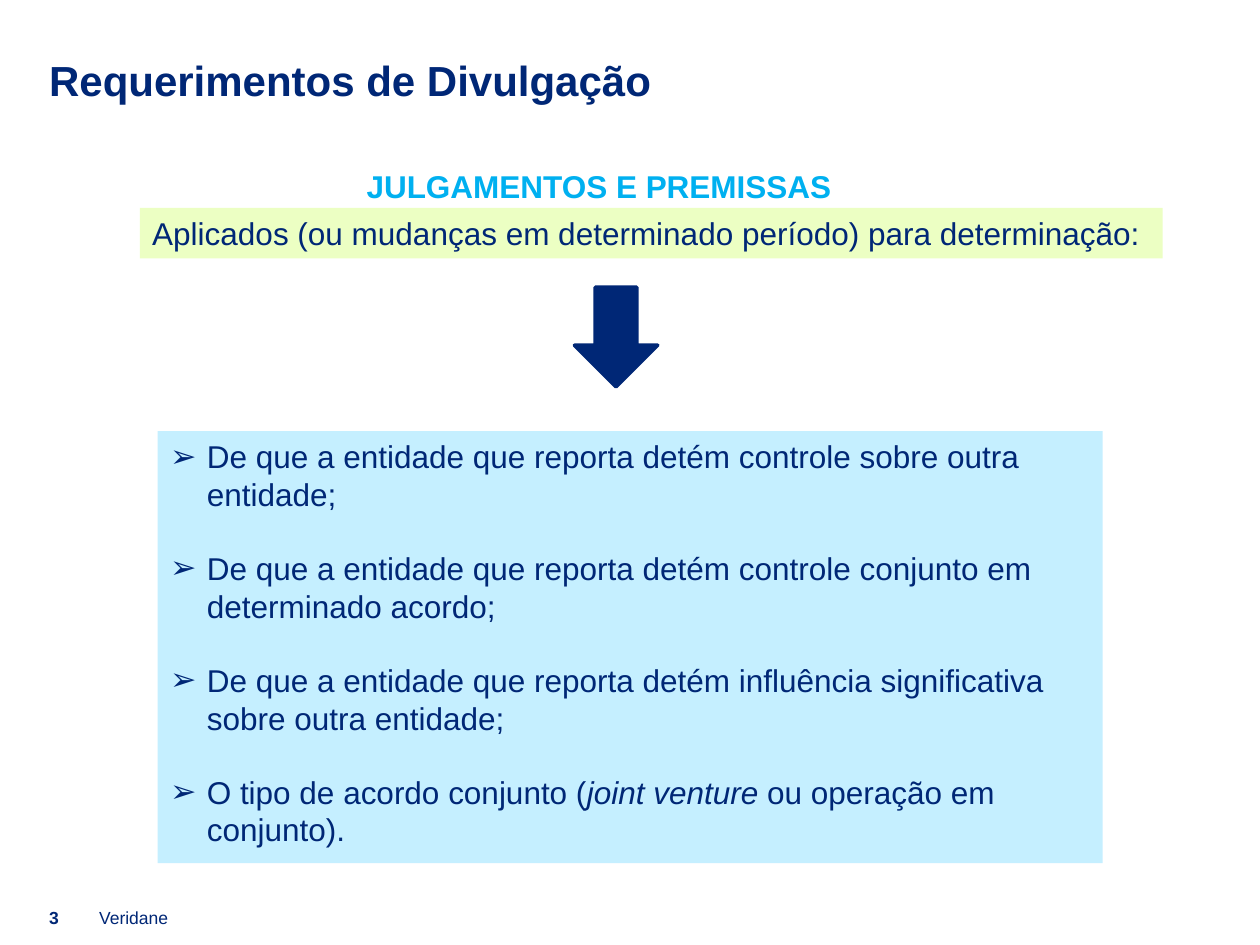
import pptx
import pptx.util
import pptx.dml.color
import pptx.enum.shapes
import pptx.enum.text
import pptx.oxml.ns
import lxml.etree

Cm = pptx.util.Cm
Pt = pptx.util.Pt
ANCHOR = pptx.enum.text.MSO_ANCHOR
ALIGN = pptx.enum.text.PP_ALIGN
SHAPE = pptx.enum.shapes.MSO_SHAPE

THEME = {
    "font": "Arial",
    "navy": "002776",
    "cyan": "00B0F0",
    "lime": "ECFFC3",
    "sky": "C5EFFF",
    "title": 24,
    "body": 18,
    "footer": 10,
}

TITLE = [[("Requerimentos de Divulgação", "b")]]
HEADING = [[("JULGAMENTOS E PREMISSAS", "b")]]
SCOPE = [[("Aplicados (ou mudanças em determinado período) para determinação:", "")]]
JUDGEMENTS = [
    [("De que a entidade que reporta detém controle sobre outra entidade;", "")],
    [("De que a entidade que reporta detém controle conjunto em determinado acordo;", "")],
    [("De que a entidade que reporta detém influência significativa sobre outra entidade;", "")],
    [("O tipo de acordo conjunto (", ""), ("joint venture ", "i"), ("ou operação em conjunto).", "")],
]
PAGE = [[("3", "b")]]
FIRM = [[("Veridane", "")]]

MARGIN = 0.99
FOOTER_TOP, FOOTER_HEIGHT = 18.34, 0.36
BULLET_INDENT = Cm(0.74)
BULLET_GAP = Pt(THEME["body"] * 1.15)


def color(name):
    return pptx.dml.color.RGBColor.from_string(THEME[name])


def add_panel(s, kind, box, fill, line=None):
    sp = s.shapes.add_shape(kind, *map(Cm, box))
    sp.shadow.inherit = False
    sp.fill.solid()
    sp.fill.fore_color.rgb = color(fill)
    if line:
        sp.line.color.rgb = color(line)
        sp.line.width = Pt(2)
    else:
        sp.line.fill.background()
    return sp


def add_label(s, box):
    return s.shapes.add_textbox(*map(Cm, box))


def write(sp, paragraphs, size, ink="navy", anchor=ANCHOR.TOP, align=ALIGN.LEFT, inset=True):
    tf = sp.text_frame
    tf.word_wrap = True
    tf.vertical_anchor = anchor
    if not inset:
        tf.margin_left = tf.margin_top = tf.margin_right = tf.margin_bottom = 0
    for i, runs in enumerate(paragraphs):
        p = tf.add_paragraph() if i else tf.paragraphs[0]
        p.alignment = align
        for text, style in runs:
            r = p.add_run()
            r.text = text
            r.font.name = THEME["font"]
            r.font.size = Pt(THEME[size])
            r.font.color.rgb = color(ink)
            r.font.bold = style == "b"
            r.font.italic = style == "i"
    return tf


def add_bullets(tf):
    qn = pptx.oxml.ns.qn
    for p in tf.paragraphs:
        if p is not tf.paragraphs[-1]:
            p.space_after = BULLET_GAP
        pPr = p._p.get_or_add_pPr()
        pPr.set("marL", str(BULLET_INDENT))
        pPr.set("indent", str(-BULLET_INDENT))
        lxml.etree.SubElement(pPr, qn("a:buFont")).set("typeface", THEME["font"])
        lxml.etree.SubElement(pPr, qn("a:buChar")).set("char", "➢")
    tf.paragraphs[-1].space_after = Pt(0)


def main():
    prs = pptx.Presentation()
    prs.slide_width, prs.slide_height = Cm(25.4), Cm(19.05)
    s = prs.slides.add_slide(prs.slide_layouts[6])

    write(add_label(s, (MARGIN, 1.09, 23.4, 1.02)), TITLE, "title", inset=False)
    for left, width, text in ((MARGIN, 1, PAGE), (2 * MARGIN + 0.02, 10.2, FIRM)):
        sp = add_label(s, (left, FOOTER_TOP, width, FOOTER_HEIGHT))
        write(sp, text, "footer", anchor=ANCHOR.BOTTOM, inset=False)

    heading = add_label(s, (7.14, 3.23, 10.19, 1.02))
    write(heading, HEADING, "body", "cyan", ANCHOR.MIDDLE, ALIGN.JUSTIFY)

    judgements = add_panel(s, SHAPE.RECTANGLE, (3.18, 8.69, 19.05, 8.71), "sky")
    add_bullets(write(judgements, JUDGEMENTS, "body"))

    add_panel(s, SHAPE.DOWN_ARROW, (11.58, 5.79, 1.68, 2.01), "navy", "navy")

    scope = add_panel(s, SHAPE.RECTANGLE, (2.82, 4.19, 20.62, 1.02), "lime")
    write(scope, SCOPE, "body", anchor=ANCHOR.MIDDLE, align=ALIGN.JUSTIFY)

    prs.save("out.pptx")


if __name__ == "__main__":
    main()
